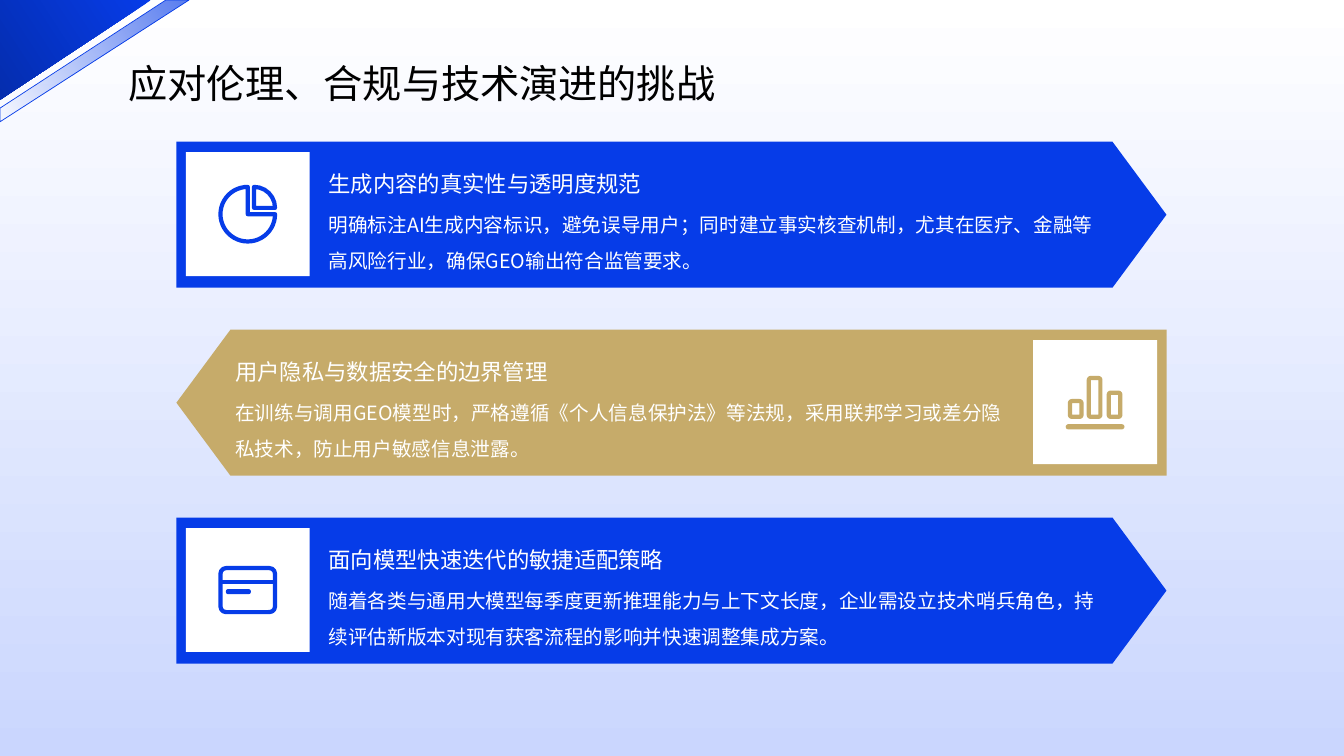
from pptx import Presentation
from pptx.dml.color import RGBColor
from pptx.enum.shapes import MSO_CONNECTOR, MSO_SHAPE
from pptx.enum.text import MSO_ANCHOR
from pptx.oxml.ns import qn
from pptx.util import Pt
from lxml.etree import SubElement

PX = 9525
FONT = "Noto Sans CJK SC"
BLUE, GOLD, WHITE = "063CE8", "C6AB6A", "FFFFFF"
STROKE = 4
TILE = 118

CHALLENGES = [
    ("生成内容的真实性与透明度规范",
     "明确标注AI生成内容标识，避免误导用户；同时建立事实核查机制，尤其在医疗、金融等高风险行业，确保GEO输出符合监管要求。"),
    ("用户隐私与数据安全的边界管理",
     "在训练与调用GEO模型时，严格遵循《个人信息保护法》等法规，采用联邦学习或差分隐私技术，防止用户敏感信息泄露。"),
    ("面向模型快速迭代的敏捷适配策略",
     "随着各类与通用大模型每季度更新推理能力与上下文长度，企业需设立技术哨兵角色，持续评估新版本对现有获客流程的影响并快速调整集成方案。"),
]


def rgb(color):
    """Turn a hex string into a colour."""
    return RGBColor.from_string(color)


def add_box(slide, kind, left, top, width, height, color):
    """Add a preset shape with a plain fill and no line."""
    shape = slide.shapes.add_shape(kind, left * PX, top * PX, width * PX, height * PX)
    shape.shadow.inherit = False
    shape.fill.solid()
    shape.fill.fore_color.rgb = rgb(color)
    shape.line.fill.background()
    return shape


def add_outline(slide, kind, left, top, width, height, color):
    """Add a preset shape drawn as a thick outline."""
    shape = add_box(slide, kind, left, top, width, height, color)
    shape.fill.background()
    shape.line.color.rgb = rgb(color)
    shape.line.width = STROKE * PX
    return shape


def set_gradient(shape, colors, angle, opacities=()):
    """Fill a shape with a two-stop gradient turned clockwise by angle."""
    shape.fill.gradient()
    shape.fill.gradient_angle = 360 - angle
    for stop, color in zip(shape.fill.gradient_stops, colors):
        stop.color.rgb = rgb(color)
    color_elements = shape._element.spPr.iter(qn("a:srgbClr"))
    for element, opacity in zip(color_elements, opacities):
        SubElement(element, qn("a:alpha")).set("val", str(opacity * 1000))


def add_polygon(slide, points):
    """Add a closed outline through the given points."""
    builder = slide.shapes.build_freeform(*points[0], scale=PX)
    builder.add_line_segments(points[1:])
    shape = builder.convert_to_shape()
    shape.shadow.inherit = False
    shape.line.fill.background()
    return shape


def add_text(slide, text, left, top, width, height, size, color, spacing, anchor):
    """Add a text box without margins."""
    box = slide.shapes.add_textbox(left * PX, top * PX, width * PX, height * PX)
    frame = box.text_frame
    frame.word_wrap = True
    frame.vertical_anchor = anchor
    frame.margin_left = frame.margin_right = frame.margin_top = frame.margin_bottom = 0
    frame.text = text
    paragraph = frame.paragraphs[0]
    paragraph.line_spacing = spacing
    run = paragraph.runs[0]
    run.font.size = Pt(size)
    run.font.color.rgb = rgb(color)
    run.font.name = FONT
    SubElement(run._r.get_or_add_rPr(), qn("a:ea")).set("typeface", FONT)


def add_pie_icon(slide, left, top, color):
    """Draw a pie with one slice pulled out."""
    add_outline(slide, MSO_SHAPE.PIE, left + 33, top + 33, 52, 52, color)
    piece = add_outline(slide, MSO_SHAPE.PIE, left + 45, top + 33, 40, 40, color)
    piece.adjustments[0] = 162
    piece.adjustments[1] = 0


def add_bars_icon(slide, left, top, color):
    """Draw three bars on a base line."""
    for x, height in ((35, 15), (53, 37), (72, 23)):
        add_outline(slide, MSO_SHAPE.ROUNDED_RECTANGLE, left + x, top + 73 - height, 11, height, color)
    add_pill(slide, left + 31, top + 80, 56, color)


def add_card_icon(slide, left, top, color):
    """Draw a bank card with a stripe and a short label."""
    card = add_outline(slide, MSO_SHAPE.ROUNDED_RECTANGLE, left + 33, top + 38, 52, 42, color)
    card.adjustments[0] = 0.13
    y = (top + 51) * PX
    stripe = slide.shapes.add_connector(
        MSO_CONNECTOR.STRAIGHT, (left + 33) * PX, y, (left + 85) * PX, y)
    stripe.line.color.rgb = rgb(color)
    stripe.line.width = STROKE * PX
    SubElement(stripe._element.spPr, qn("a:effectLst"))
    add_pill(slide, left + 38, top + 58, 24, color)


def add_pill(slide, left, top, width, color):
    """Add a short bar with round ends."""
    pill = add_box(slide, MSO_SHAPE.ROUNDED_RECTANGLE, left, top, width, 5, color)
    pill.adjustments[0] = 0.5


def add_challenge(slide, top, heading, body, color, draw_icon, mirrored):
    """Add an arrow banner with its icon tile, heading and body."""
    arrow = add_box(slide, MSO_SHAPE.PENTAGON, 168, top, 943, 139, color)
    arrow.adjustments[0] = 0.37
    arrow.rotation = 180 if mirrored else 0
    text_left, tile_left = (224, 984) if mirrored else (313, 177)
    add_text(slide, body, text_left, top + 57, 742, 72, 14, WHITE, 1.5, MSO_ANCHOR.TOP)
    add_text(slide, heading, text_left, top + 11, 742, 42, 16, WHITE, 1.3, MSO_ANCHOR.BOTTOM)
    add_box(slide, MSO_SHAPE.RECTANGLE, tile_left, top + 10, TILE, TILE, WHITE)
    draw_icon(slide, tile_left, top + 10, color)


def add_corner(slide):
    """Add the blue corner and the pale strip beside it."""
    corner = add_polygon(slide, [(0, 0), (144, 0), (0, 95)])
    set_gradient(corner, (BLUE, "052DAE"), 147)
    strip = add_polygon(slide, [(158, 0), (180, 0), (0, 116), (0, 103)])
    set_gradient(strip, (BLUE, "063DED"), 147, (68, 0))
    strip.line.color.rgb = rgb(BLUE)
    strip.line.width = Pt(0.5)


def main():
    """Build the slide and save it."""
    presentation = Presentation()
    presentation.slide_width, presentation.slide_height = 1280 * PX, 720 * PX
    slide = presentation.slides.add_slide(presentation.slide_layouts[6])
    backdrop = add_box(slide, MSO_SHAPE.RECTANGLE, 0, 0, 1280, 720, WHITE)
    set_gradient(backdrop, (WHITE, "CAD6FE"), 90)
    icons = (add_pie_icon, add_bars_icon, add_card_icon)
    for index, ((heading, body), draw_icon) in enumerate(zip(CHALLENGES, icons)):
        mirrored = index % 2 == 1
        color = GOLD if mirrored else BLUE
        add_challenge(slide, 135 + 179 * index, heading, body, color, draw_icon, mirrored)
    add_corner(slide)
    add_text(slide, "应对伦理、合规与技术演进的挑战", 122, 41, 808, 62, 28, "000000", 1.3, MSO_ANCHOR.MIDDLE)
    presentation.save("out.pptx")


if __name__ == "__main__":
    main()
